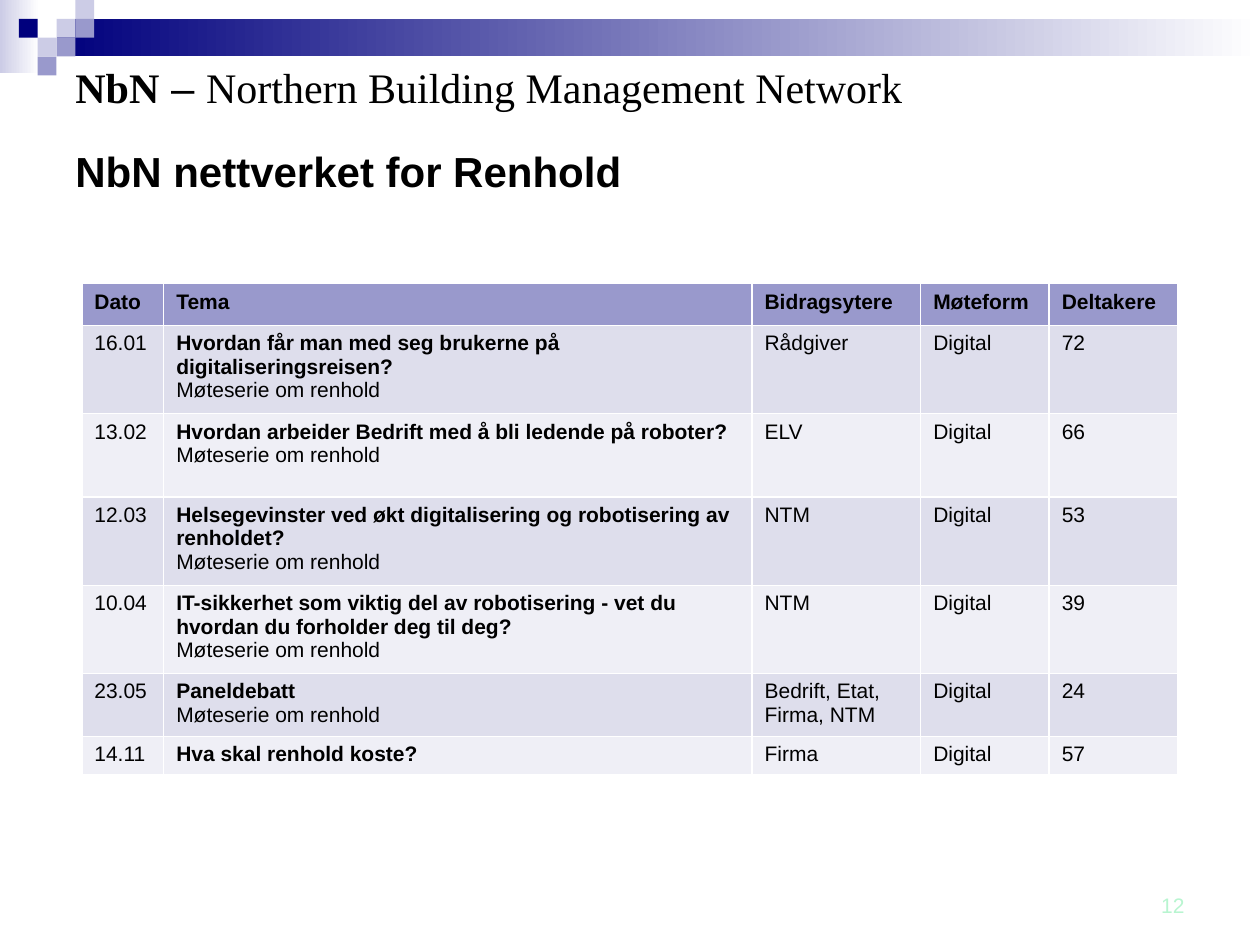
from pptx import Presentation, util as u
from pptx.dml import color
from pptx.enum import shapes, text

COLORS = {
    "navy": "00007D", "violet": "9999CC", "pale": "CCCCE6", "white": "FFFFFF",
    "black": "000000", "odd_row": "DEDEEC", "even_row": "EFEFF6", "number": "B8F5D0",
}
SERIES = "Møteserie om renhold"
HEADERS = ["Dato", "Tema", "Bidragsytere", "Møteform", "Deltakere"]
MEETINGS = [
    ("16.01", "Hvordan får man med seg brukerne på digitaliseringsreisen?", SERIES, "Rådgiver", "72"),
    ("13.02", "Hvordan arbeider Bedrift med å bli ledende på roboter?", SERIES, "ELV", "66"),
    ("12.03", "Helsegevinster ved økt digitalisering og robotisering av renholdet?", SERIES, "NTM", "53"),
    ("10.04", "IT-sikkerhet som viktig del av robotisering - vet du hvordan du forholder deg til deg?",
     SERIES, "NTM", "39"),
    ("23.05", "Paneldebatt", SERIES, "Bedrift, Etat, Firma, NTM", "24"),
    ("14.11", "Hva skal renhold koste?", None, "Firma", "57"),
]
COLUMN_WIDTHS = [1.65, 11.86, 3.4, 2.59, 2.59]
ROW_HEIGHTS = [0.84, 1.68, 1.68, 1.68, 1.68, 1.2, 0.72]


def rgb(name):
    return color.RGBColor.from_string(COLORS[name])


def add_run(paragraph, words, size=12, bold=False, font="Arial", ink="black"):
    run = paragraph.add_run()
    run.text = words
    run.font.size = u.Pt(size)
    run.font.bold = bold
    run.font.name = font
    run.font.color.rgb = rgb(ink)


def add_text_box(slide, left, top, width, height, align=text.PP_ALIGN.LEFT):
    """Add a wrapping text box and return its first paragraph."""
    frame = slide.shapes.add_textbox(u.Cm(left), u.Cm(top), u.Cm(width), u.Cm(height)).text_frame
    frame.word_wrap = True
    frame.vertical_anchor = text.MSO_ANCHOR.MIDDLE
    paragraph = frame.paragraphs[0]
    paragraph.alignment = align
    return paragraph


def add_block(slide, left, top, width, height, fill, fade_to=None):
    """Add a plain rectangle, solid or fading from left to right."""
    shape = slide.shapes.add_shape(
        shapes.MSO_SHAPE.RECTANGLE, u.Cm(left), u.Cm(top), u.Cm(width), u.Cm(height))
    shape.shadow.inherit = False
    shape.line.fill.background()
    if fade_to:
        shape.fill.gradient()
        shape.fill.gradient_angle = 0
        for stop, name in zip(shape.fill.gradient_stops, (fill, fade_to)):
            stop.color.rgb = rgb(name)
    else:
        shape.fill.solid()
        shape.fill.fore_color.rgb = rgb(fill)


def add_banner(slide, left, top, width, unit=0.38):
    """Fading bars with a mosaic of squares on a grid."""
    add_block(slide, left, top, 0.79, 1.47, "pale", "white")
    bar_left = left + 3 * unit
    add_block(slide, bar_left, top + unit, left + width - bar_left, 2 * unit, "navy", "white")
    squares = [(3, 1, "pale"), (4, 0, "pale"), (4, 1, "violet"), (2, 2, "pale"),
               (1, 1, "navy"), (3, 2, "violet"), (2, 3, "violet")]
    for column, row, fill in squares:
        add_block(slide, left + column * unit, top + row * unit, unit, unit, fill)


def add_headings(slide, left, top, width):
    """Name of the network, with the slide title below it."""
    network = add_text_box(slide, left, top, width, 1.3)
    add_run(network, "NbN", size=24, bold=True, font="Times New Roman")
    add_run(network, " – ", size=24)
    add_run(network, "Northern Building Management Network", size=24, font="Times New Roman")
    title = add_text_box(slide, left, top + 1.7, width, 1.3)
    add_run(title, "NbN nettverket for Renhold", size=24, bold=True)


def fill_cell(cell, fill, lines):
    """Write (words, bold) lines into a cell, one paragraph each."""
    cell.fill.solid()
    cell.fill.fore_color.rgb = rgb(fill)
    frame = cell.text_frame
    for index, (words, bold) in enumerate(lines):
        paragraph = frame.add_paragraph() if index else frame.paragraphs[0]
        add_run(paragraph, words, bold=bold)


def add_meeting_table(slide, left, top):
    table = slide.shapes.add_table(
        len(ROW_HEIGHTS), len(COLUMN_WIDTHS), u.Cm(left), u.Cm(top),
        u.Cm(sum(COLUMN_WIDTHS)), u.Cm(sum(ROW_HEIGHTS))).table
    for column, width in zip(table.columns, COLUMN_WIDTHS):
        column.width = u.Cm(width)
    for row, height in zip(table.rows, ROW_HEIGHTS):
        row.height = u.Cm(height)

    for column, header in enumerate(HEADERS):
        fill_cell(table.cell(0, column), "violet", [(header, True)])
    for row, (date, topic, series, speakers, attendance) in enumerate(MEETINGS, start=1):
        fill = "odd_row" if row % 2 else "even_row"
        topic_lines = [(topic, True)] + ([(series, False)] if series else [])
        contents = [[(date, False)], topic_lines, [(speakers, False)],
                    [("Digital", False)], [(attendance, False)]]
        for column, lines in enumerate(contents):
            fill_cell(table.cell(row, column), fill, lines)


def add_page_number(slide, left, top, width, height):
    paragraph = add_text_box(slide, left, top, width, height, align=text.PP_ALIGN.RIGHT)
    add_run(paragraph, "12", ink="number")


def main():
    presentation = Presentation()
    presentation.slide_width = u.Cm(25.4)
    presentation.slide_height = u.Cm(19.05)
    slide = presentation.slides.add_slide(presentation.slide_layouts[6])
    add_banner(slide, 0, 0, 25.4)
    add_headings(slide, 1.27, 1.1, 22.86)
    add_meeting_table(slide, 1.65, 5.72)
    add_page_number(slide, 22.1, 17.8, 2.03, 0.9)
    presentation.save("out.pptx")


if __name__ == "__main__":
    main()
